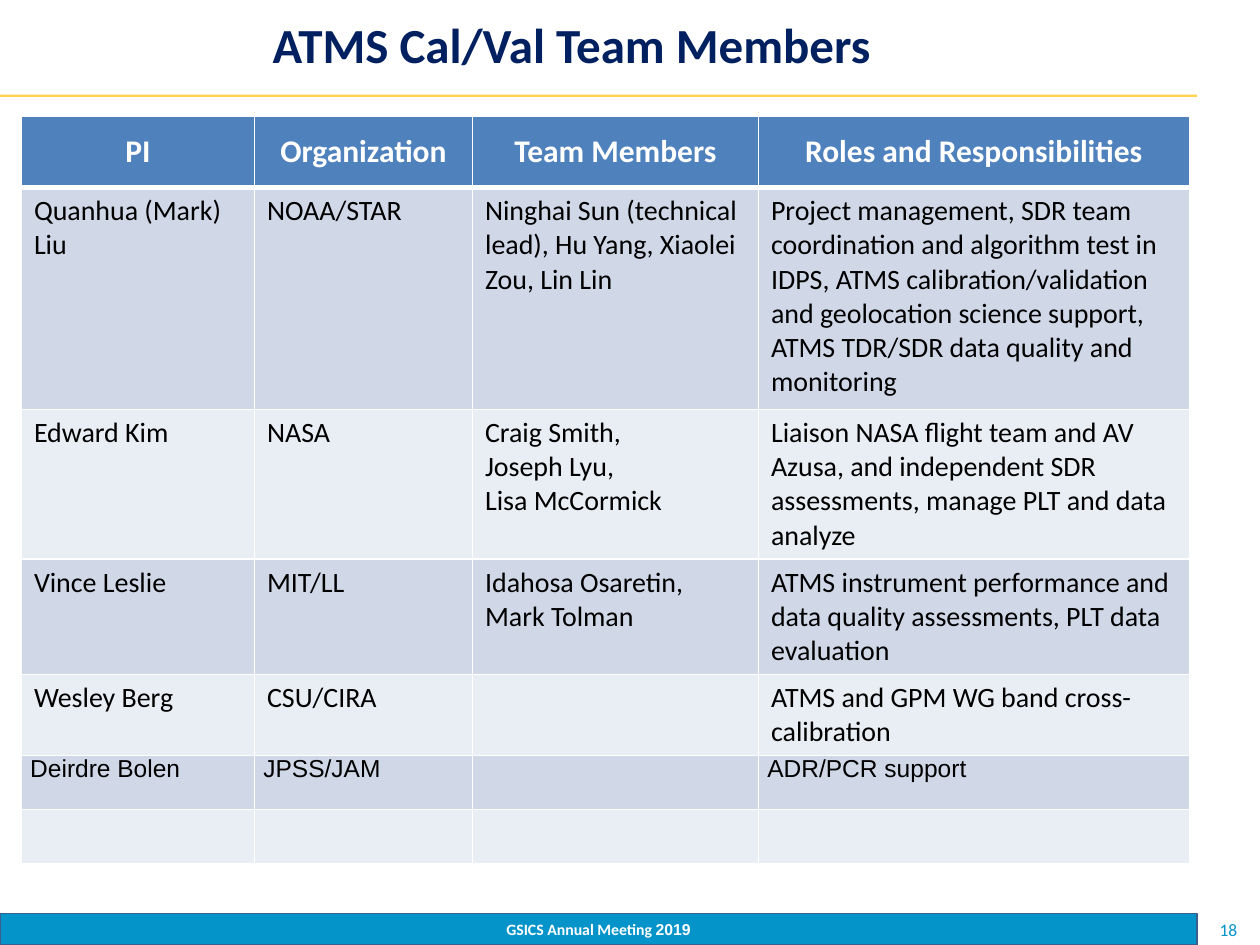
from dataclasses import dataclass

from lxml import etree
from pptx import Presentation
from pptx.dml.color import RGBColor
from pptx.enum.shapes import MSO_SHAPE
from pptx.enum.text import MSO_ANCHOR, MSO_AUTO_SIZE, PP_ALIGN
from pptx.oxml.ns import qn
from pptx.util import Inches, Pt

RECT = MSO_SHAPE.RECTANGLE
LEFT, CENTER = PP_ALIGN.LEFT, PP_ALIGN.CENTER
TOP, MIDDLE = MSO_ANCHOR.TOP, MSO_ANCHOR.MIDDLE


@dataclass(frozen=True)
class Theme:
    white: str = "FFFFFF"
    black: str = "000000"
    navy: str = "002060"
    gold: str = "FFD24E"
    footer: str = "0594C9"
    footer_line: str = "3A5F8C"
    header: str = "4F81BD"
    bands: tuple = ("D0D8E8", "E9EDF4")
    font: str = "Calibri"
    alt_font: str = "Arial"
    title_pt: int = 28
    header_pt: int = 18
    body_pt: int = 16
    support_pt: int = 14
    number_pt: int = 10
    footer_pt: int = 9


T = Theme()
BAR_W = 9.5
FOOTER_Y, FOOTER_H = 7.25, 0.25
COLUMNS = [1.85, 1.73, 2.27, 3.42]
ROW_HEIGHTS = [0.57, 1.76, 1.02, 0.75, 0.52, 0.43, 0.43]
SUPPORT_ROW = 5
ROWS = [
    ["PI", "Organization", "Team Members", "Roles and Responsibilities"],
    ["Quanhua (Mark) Liu", "NOAA/STAR",
     "Ninghai Sun (technical lead), Hu Yang, Xiaolei Zou, Lin Lin",
     "Project management, SDR team coordination and algorithm test in IDPS, "
     "ATMS calibration/validation and geolocation science support, "
     "ATMS TDR/SDR data quality and monitoring"],
    ["Edward Kim", "NASA", "Craig Smith,\nJoseph Lyu,\nLisa McCormick",
     "Liaison NASA flight team and AV Azusa, and independent SDR assessments, "
     "manage PLT and data analyze"],
    ["Vince Leslie", "MIT/LL", "Idahosa Osaretin, Mark Tolman",
     "ATMS instrument performance and data quality assessments, "
     "PLT data evaluation"],
    ["Wesley Berg", "CSU/CIRA", "", "ATMS and GPM WG band cross-calibration"],
    ["Deirdre Bolen", "JPSS/JAM", "", "ADR/PCR support"],
    ["", "", "", ""],
]


def add_run(p, text, *, size, color, font=T.font, bold=False):
    r = p.add_run()
    r.text = text
    r.font.name, r.font.size, r.font.bold = font, Pt(size), bold
    r.font.color.rgb = RGBColor.from_string(color)


def write(tf, text, *, align=LEFT, **fmt):
    """Write text into a frame, one paragraph per line."""
    for i, line in enumerate(text.split("\n")):
        p = tf.add_paragraph() if i else tf.paragraphs[0]
        p.alignment = align
        add_run(p, line, **fmt)


def set_frame(tf, *, wrap):
    tf.margin_left = tf.margin_right = tf.margin_top = tf.margin_bottom = 0
    tf.vertical_anchor = MIDDLE
    tf.auto_size = MSO_AUTO_SIZE.NONE
    tf.word_wrap = wrap


def add_bar(slide, y, h, color, line=None):
    sp = slide.shapes.add_shape(RECT, 0, Inches(y), Inches(BAR_W), Inches(h))
    sp.shadow.inherit = False
    sp.fill.solid()
    sp.fill.fore_color.rgb = RGBColor.from_string(color)
    if line:
        sp.line.color.rgb = RGBColor.from_string(line)
        sp.line.width = Pt(0)
    else:
        sp.line.fill.background()


def add_label(slide, x, w, text, **fmt):
    """Add a centred label in the footer and return its paragraph."""
    box = slide.shapes.add_textbox(Inches(x), Inches(FOOTER_Y), Inches(w), Inches(FOOTER_H))
    set_frame(box.text_frame, wrap=False)
    write(box.text_frame, text, align=CENTER, **fmt)
    return box.text_frame.paragraphs[0]


def set_borders(cell, top, bottom):
    tc_pr = cell._tc.get_or_add_tcPr()
    widths = {"a:lnL": 1, "a:lnR": 1, "a:lnT": top, "a:lnB": bottom}
    for i, (tag, width) in enumerate(widths.items()):
        ln = etree.Element(qn(tag), w=str(Pt(width)))
        fill = etree.SubElement(ln, qn("a:solidFill"))
        etree.SubElement(fill, qn("a:srgbClr"), val=T.white)
        tc_pr.insert(i, ln)


def add_title(slide, text):
    title = slide.shapes.title
    title.left, title.top = Inches(0.75), Inches(0.08)
    title.width, title.height = Inches(7.57), Inches(0.54)
    set_frame(title.text_frame, wrap=True)
    write(title.text_frame, text, align=CENTER, size=T.title_pt, color=T.navy, bold=True)
    # Bring the title in front of the white header band
    slide.shapes._spTree.append(title._element)


def fill_cell(cell, text, row):
    is_header = row == 0
    cell.fill.solid()
    color = T.header if is_header else T.bands[(row - 1) % 2]
    cell.fill.fore_color.rgb = RGBColor.from_string(color)
    cell.vertical_anchor = MIDDLE if is_header else TOP
    set_borders(cell, top=3 if row == 1 else 1, bottom=3 if is_header else 1)
    if not text:
        return
    fmt = dict(size=T.body_pt, color=T.black)
    if is_header:
        fmt = dict(size=T.header_pt, color=T.white, bold=True, align=CENTER)
    elif row == SUPPORT_ROW:
        fmt.update(size=T.support_pt, font=T.alt_font)
        cell.margin_left = cell.margin_right = Inches(0.07)
        cell.margin_top = cell.margin_bottom = 0
    write(cell.text_frame, text, **fmt)


def add_team_table(slide):
    frame = slide.shapes.add_table(
        len(ROWS), len(COLUMNS), Inches(0.17), Inches(0.92),
        Inches(sum(COLUMNS)), Inches(sum(ROW_HEIGHTS)))
    table = frame.table
    for column, width in zip(table.columns, COLUMNS):
        column.width = Inches(width)
    for i, (height, texts) in enumerate(zip(ROW_HEIGHTS, ROWS)):
        table.rows[i].height = Inches(height)
        for j, text in enumerate(texts):
            fill_cell(table.cell(i, j), text, i)


def main():
    prs = Presentation()
    prs.slide_width, prs.slide_height = Inches(10), Inches(7.5)
    slide = prs.slides.add_slide(prs.slide_layouts[5])

    # Footer
    add_bar(slide, FOOTER_Y, FOOTER_H, T.footer, line=T.footer_line)
    add_label(slide, BAR_W, 0.5, "18", size=T.number_pt, color=T.footer)
    fmt = dict(size=T.footer_pt, color=T.white, bold=True)
    p = add_label(slide, 0, BAR_W, "GSICS Annual Meeting ", **fmt)
    add_run(p, "2019", font=T.alt_font, **fmt)

    # Header band and title
    add_bar(slide, 0, 0.75, T.white)
    add_bar(slide, 0.75, 0.02, T.gold)
    add_title(slide, "ATMS Cal/Val Team Members")

    # Team table
    add_team_table(slide)
    prs.save("out.pptx")


if __name__ == "__main__":
    main()
